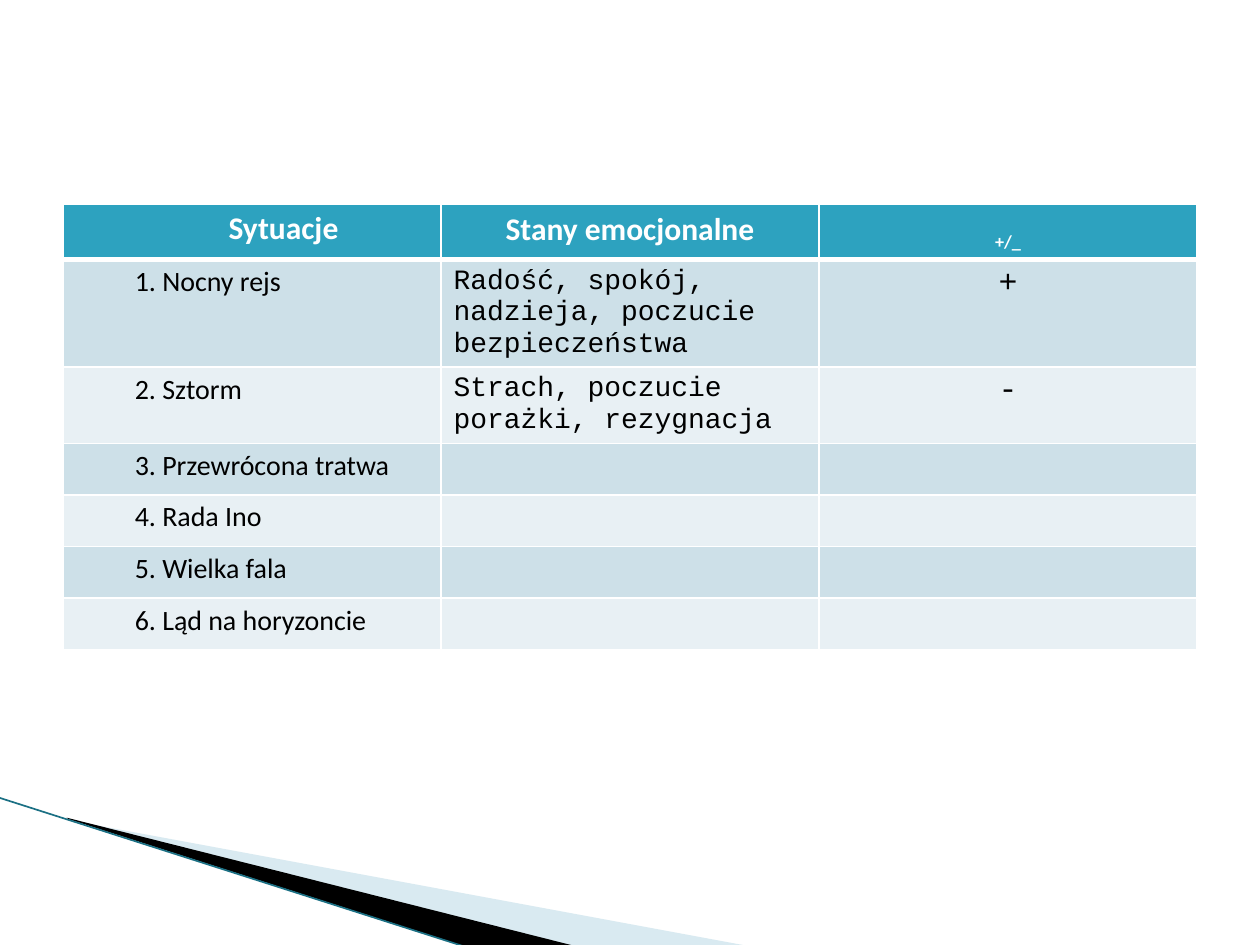
from lxml.etree import SubElement
from pptx import Presentation
from pptx.dml.color import RGBColor
from pptx.enum.shapes import MSO_CONNECTOR
from pptx.enum.text import PP_ALIGN
from pptx.oxml import parse_xml
from pptx.oxml.ns import nsdecls, qn
from pptx.util import Inches, Pt

WHITE = RGBColor(0xFF, 0xFF, 0xFF)
BLACK = RGBColor(0x00, 0x00, 0x00)
HEADER_TEAL = RGBColor(0x2D, 0xA2, 0xBF)
BAND_DARK = RGBColor(0xCD, 0xE0, 0xE8)
BAND_LIGHT = RGBColor(0xE8, 0xF0, 0xF4)
PALE_BLUE = RGBColor(0xA0, 0xCB, 0xDC)
EDGE_TEAL = RGBColor(0x1B, 0x70, 0x84)

HEADINGS = ("Sytuacje", "Stany emocjonalne", "+/_")
SITUATIONS = (
    ("1. Nocny rejs", "Radość, spokój, nadzieja, poczucie bezpieczeństwa", "+"),
    ("2. Sztorm", "Strach, poczucie porażki, rezygnacja", "-"),
    ("3. Przewrócona tratwa", "", ""),
    ("4. Rada Ino", "", ""),
    ("5. Wielka fala", "", ""),
    ("6. Ląd na horyzoncie", "", ""),
)


class SlideBuilder:
    """Holds the fonts and the current slide."""

    label_font = "Calibri"
    answer_font = "Courier New"

    def __init__(self, slide):
        self.slide = slide

    def wedge(self, corners, color, opacity=100):
        points = [(Inches(x), Inches(y)) for x, y in corners]
        outline = self.slide.shapes.build_freeform(*points[0], scale=1.0)
        outline.add_line_segments(points[1:], close=True)
        shape = outline.convert_to_shape()
        shape.shadow.inherit = False
        shape.fill.solid()
        shape.fill.fore_color.rgb = color
        shape.line.fill.background()
        if opacity < 100:
            tint = shape._element.spPr.find(qn("a:solidFill"))[0]
            SubElement(tint, qn("a:alpha"), val=str(opacity * 1000))

    def line(self, start, end, color, width):
        ends = [Inches(value) for value in (*start, *end)]
        edge = self.slide.shapes.add_connector(MSO_CONNECTOR.STRAIGHT, *ends)
        edge.line.color.rgb = color
        edge.line.width = Pt(width)
        SubElement(edge._element.spPr, qn("a:effectLst"))

    def table(self, left, top, column_width, row_height, headings, rows):
        row_count, column_count = len(rows) + 1, len(headings)
        table = self.slide.shapes.add_table(
            row_count, column_count, Inches(left), Inches(top),
            Inches(column_width * column_count), Inches(row_height * row_count),
        ).table
        for column in table.columns:
            column.width = Inches(column_width)
        for row in table.rows:
            row.height = Inches(row_height)
        for r, texts in enumerate((headings, *rows)):
            for c, text in enumerate(texts):
                self.cell(table.cell(r, c), r, c, text)

    def cell(self, cell, row, column, text):
        header = row == 0
        self.borders(cell, top=3 if row == 1 else 1, bottom=3 if header else 1)
        cell.fill.solid()
        cell.fill.fore_color.rgb = (
            HEADER_TEAL if header else BAND_DARK if row % 2 else BAND_LIGHT)
        if column == 0:
            cell.margin_left = cell.margin_right = Inches(0.07)
            cell.margin_top = cell.margin_bottom = 0
        if not text:
            return

        cell.text = text
        paragraph = cell.text_frame.paragraphs[0]
        centred = header or column == 2
        paragraph.alignment = PP_ALIGN.CENTER if centred else PP_ALIGN.LEFT
        if column == 0:
            paragraph.line_spacing = 1.15
            paragraph._p.get_or_add_pPr().set("marL", str(Inches(0.5)))
        font = paragraph.font
        font.name = self.label_font if header or column == 0 else self.answer_font
        font.size = Pt(18 if centred else 16)
        font.bold = header
        font.color.rgb = WHITE if header else BLACK
        if header and column == 2:  # the sign heading is a subscript
            paragraph.runs[0]._r.get_or_add_rPr().set("baseline", "-25000")

    def borders(self, cell, top, bottom):
        properties = cell._tc.get_or_add_tcPr()
        for side, width in (("L", 1), ("R", 1), ("T", top), ("B", bottom)):
            properties.append(parse_xml(
                f'<a:ln{side} {nsdecls("a")} w="{Pt(width)}"><a:solidFill>'
                f'<a:srgbClr val="{WHITE}"/></a:solidFill></a:ln{side}>'))


def main():
    presentation = Presentation()
    presentation.slide_width = Inches(10)
    presentation.slide_height = Inches(7.5)
    builder = SlideBuilder(
        presentation.slides.add_slide(presentation.slide_layouts[6]))

    # Wedges in the bottom corner
    builder.wedge([(0.55, 6.51), (5.95, 7.51), (4.56, 7.51), (0.55, 6.5)],
                  PALE_BLUE, opacity=40)
    builder.wedge([(0.53, 6.49), (4.57, 7.51), (3.72, 7.52), (0.54, 6.5)], BLACK)
    builder.line((-0.01, 6.33), (3.71, 7.52), EDGE_TEAL, 0.95)

    # Situations and the emotions they bring
    builder.table(0.5, 1.62, 3, 0.41, HEADINGS, SITUATIONS)

    presentation.save("out.pptx")


if __name__ == "__main__":
    main()
